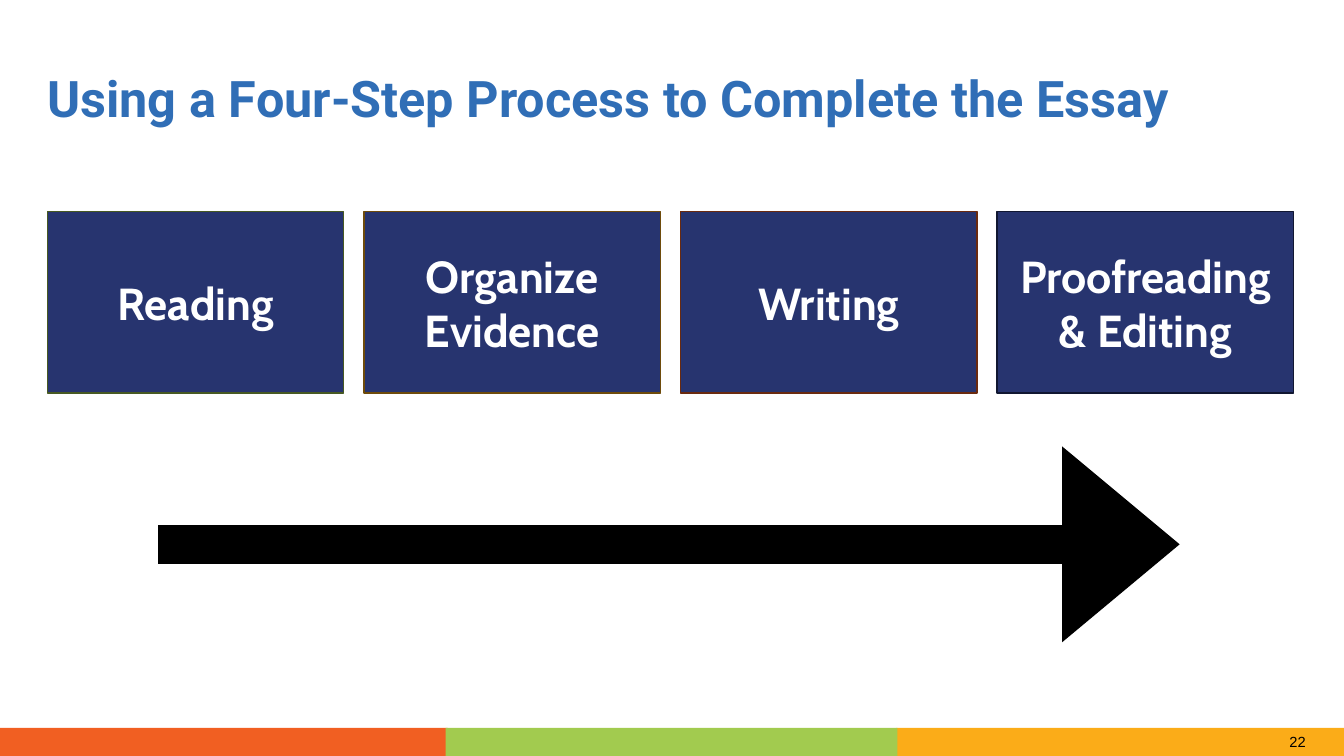
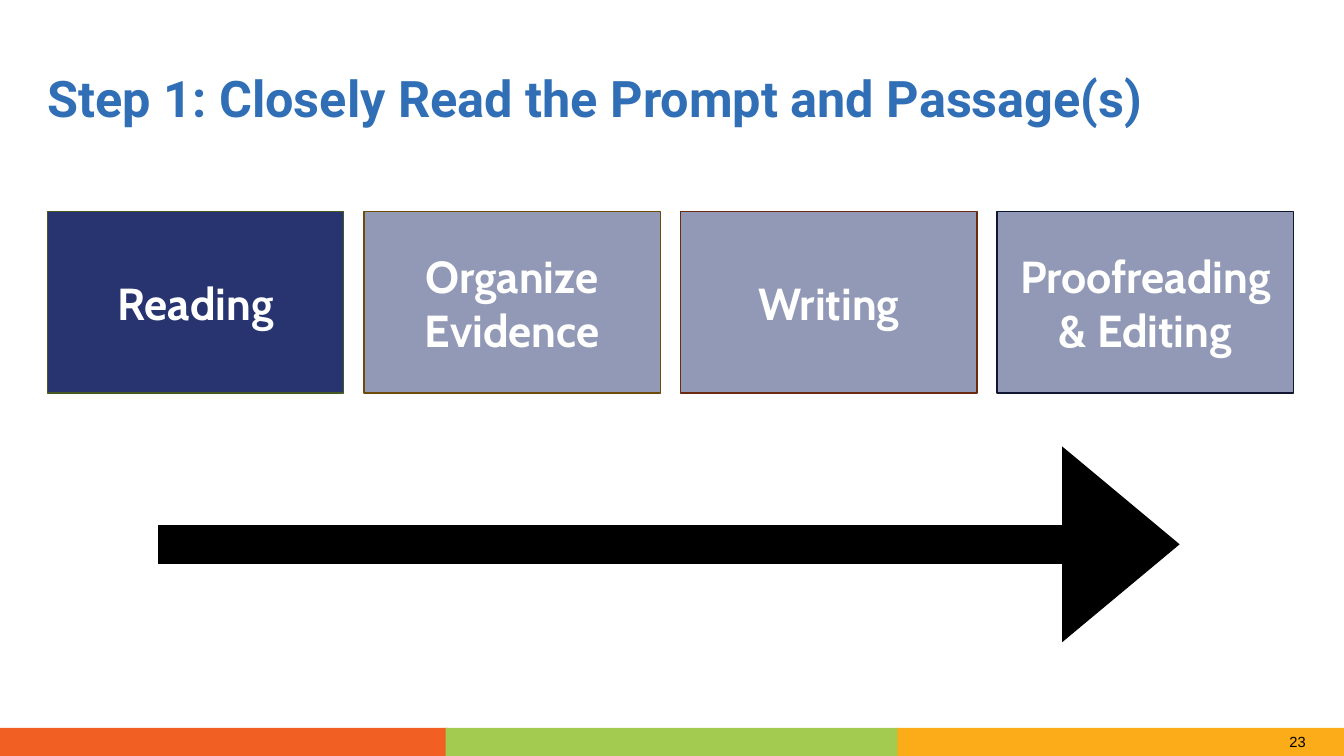
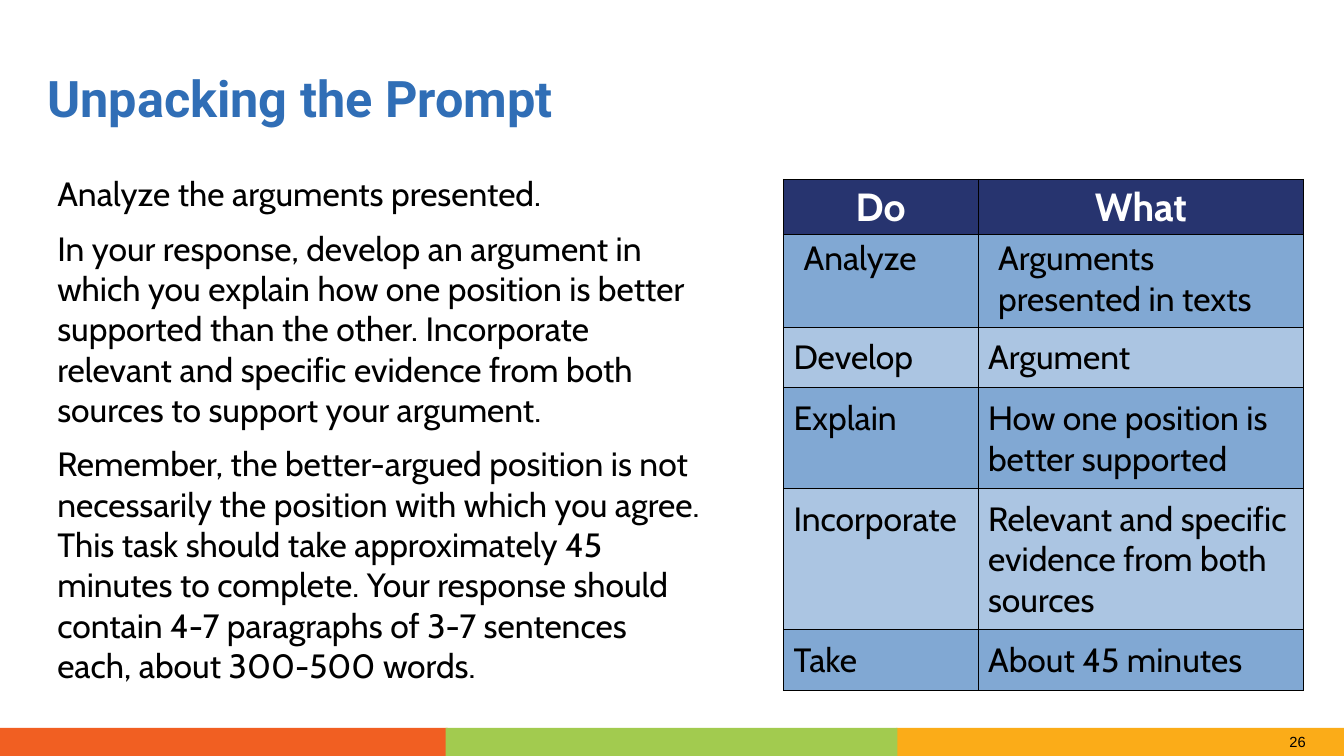
from dataclasses import dataclass

from lxml import etree
from pptx import Presentation
from pptx.dml.color import RGBColor
from pptx.enum.shapes import MSO_CONNECTOR, MSO_SHAPE
from pptx.enum.text import MSO_ANCHOR, PP_ALIGN
from pptx.oxml.ns import qn
from pptx.util import Inches, Pt

RECTANGLE = MSO_SHAPE.RECTANGLE
STRAIGHT = MSO_CONNECTOR.STRAIGHT
LEFT, CENTER = PP_ALIGN.LEFT, PP_ALIGN.CENTER
TOP, MIDDLE = MSO_ANCHOR.TOP, MSO_ANCHOR.MIDDLE

COLORS = {
    "navy": "27346F", "blue": "2E6EB7", "title": "306EB6",
    "orange": "F15F22", "green": "A2CB4F", "amber": "FBAC18",
    "black": "000000", "white": "FFFFFF",
    "olive edge": "475923", "brown edge": "6E4B0B",
    "rust edge": "6A2A0F", "dark edge": "111731",
}
BODY_FONT = "Cabin"


@dataclass(frozen=True)
class Band:
    left: float
    width: float
    color: str


@dataclass(frozen=True)
class Step:
    label: str
    edge: str


BANDS = [Band(8.89, 4.44, "amber"), Band(0, 4.44, "orange"), Band(4.42, 4.48, "green")]
BAND_TOP, BAND_HEIGHT = 7.22, 0.28
MARGIN = 0.47

STEPS = [
    Step("Reading", "olive edge"),
    Step("Organize Evidence", "brown edge"),
    Step("Writing", "rust edge"),
    Step("Proofreading & Editing", "dark edge"),
]
STEP_TOP, STEP_WIDTH, STEP_HEIGHT, STEP_GAP = 2.1, 2.94, 1.8, 0.2

PROMPT = [
    "Analyze the arguments presented.",
    "In your response, develop an argument in which you explain how one position is better "
    "supported than the other. Incorporate relevant and specific evidence from both sources "
    "to support your argument.",
    "Remember, the better-argued position is not necessarily the position with which you agree. "
    "This task should take approximately 45 minutes to complete. Your response should contain "
    "4-7 paragraphs of 3-7 sentences each, about 300-500 words.",
]
TASKS = [
    ("Do", "What"),
    ("Analyze", "Arguments presented in texts"),
    ("Develop", "Argument"),
    ("Explain", "How one position is better supported"),
    ("Incorporate", "Relevant and specific evidence from both sources"),
    ("Take", "About 45 minutes"),
]
TASK_COLUMNS = [1.93, 3.23]
TASK_ROWS = [0.48, 0.92, 0.59, 0.99, 1.39, 0.59]


def rgb(name: str) -> RGBColor:
    return RGBColor.from_string(COLORS[name])


def set_fill(fill, color: str, opacity: int = 100) -> None:
    """Fill with a solid colour; opacity is in percent."""
    fill.solid()
    fill.fore_color.rgb = rgb(color)
    if opacity < 100:
        # The public fill object holds no alpha, so it is added to the colour element
        color_element = fill.fore_color._color._xClr
        etree.SubElement(color_element, qn("a:alpha"), val=str(opacity * 1000))


def write_text(frame, *texts: str, size: float, font: str = BODY_FONT, color: str = "black",
               bold: bool = False, align=LEFT, anchor=TOP, before: float = 0,
               line_spacing: float = 1.0) -> None:
    frame.word_wrap = True
    frame.vertical_anchor = anchor
    for index, text in enumerate(texts):
        para = frame.paragraphs[0] if index == 0 else frame.add_paragraph()
        para.alignment = align
        para.space_before = Pt(before)
        para.line_spacing = line_spacing
        span = para.add_run()
        span.text = text
        span.font.name = font
        span.font.size = Pt(size)
        span.font.bold = bold
        span.font.color.rgb = rgb(color)


def set_insets(target, horizontal: float, vertical: float) -> None:
    target.margin_left = target.margin_right = Inches(horizontal)
    target.margin_top = target.margin_bottom = Inches(vertical)


def add_text_box(page, left: float, top: float, width: float, height: float):
    return page.shapes.add_textbox(Inches(left), Inches(top), Inches(width), Inches(height)).text_frame


def add_rectangle(page, left: float, top: float, width: float, height: float,
                  color: str, opacity: int = 100):
    box = page.shapes.add_shape(RECTANGLE, Inches(left), Inches(top), Inches(width), Inches(height))
    box.shadow.inherit = False
    box.line.fill.background()
    set_fill(box.fill, color, opacity)
    return box


def add_page(deck, title: str, number: int):
    """Add a slide with the shared bands, page number and title."""
    page = deck.slides.add_slide(deck.slide_layouts[6])
    for band in BANDS:
        add_rectangle(page, band.left, BAND_TOP, band.width, BAND_HEIGHT, band.color)
    write_text(add_text_box(page, 12.69, BAND_TOP, 0.38, BAND_HEIGHT), str(number),
               size=10.5, font="Arial")
    frame = add_text_box(page, MARGIN, 0.77, 12.4, 0.47)
    set_insets(frame, 0, 0)
    write_text(frame, title, size=36, font="Roboto", color="title", bold=True,
               anchor=MIDDLE, line_spacing=0.9)
    return page


def add_process(page, active: set[str]) -> None:
    """Draw the step boxes, fading inactive ones, and the arrow below."""
    for index, step in enumerate(STEPS):
        left = MARGIN + index * (STEP_WIDTH + STEP_GAP)
        box = add_rectangle(page, left, STEP_TOP, STEP_WIDTH, STEP_HEIGHT, "navy",
                            100 if step.label in active else 50)
        box.line.color.rgb = rgb(step.edge)
        box.line.width = Pt(1)
        write_text(box.text_frame, step.label, size=32, color="white", bold=True,
                   align=CENTER, anchor=MIDDLE)
    arrow = page.shapes.add_connector(STRAIGHT, Inches(1.57), Inches(5.4), Inches(11.7), Inches(5.4))
    arrow.line.color.rgb = rgb("black")
    arrow.line.width = Pt(28)
    properties = arrow._element.spPr
    etree.SubElement(properties.find(qn("a:ln")), qn("a:tailEnd"), type="triangle", w="lg", len="med")
    etree.SubElement(properties, qn("a:effectLst"))


def add_borders(cell, color: str, width: float) -> None:
    properties = cell._tc.get_or_add_tcPr()
    for index, side in enumerate(("lnL", "lnR", "lnT", "lnB")):
        border = etree.Element(qn(f"a:{side}"), w=str(Pt(width)))
        fill = etree.SubElement(border, qn("a:solidFill"))
        etree.SubElement(fill, qn("a:srgbClr"), val=COLORS[color])
        properties.insert(index, border)


def add_task_table(page) -> None:
    table = page.shapes.add_table(
        len(TASK_ROWS), len(TASK_COLUMNS), Inches(7.77), Inches(1.78),
        Inches(sum(TASK_COLUMNS)), Inches(sum(TASK_ROWS))).table
    table.horz_banding = False
    for column, width in zip(table.columns, TASK_COLUMNS):
        column.width = Inches(width)
    for row_index, (row, height) in enumerate(zip(table.rows, TASK_ROWS)):
        row.height = Inches(height)
        for cell, text in zip(row.cells, TASKS[row_index]):
            if row_index == 0:
                set_insets(cell, 0.08, 0.04)
                set_fill(cell.fill, "navy")
                write_text(cell.text_frame, text, size=28, color="white", bold=True, align=CENTER)
            else:
                set_insets(cell, *((0.2, 0.04) if row_index == 1 else (0.1, 0.1)))
                set_fill(cell.fill, "blue", 60 if row_index % 2 else 40)
                write_text(cell.text_frame, text, size=24)
            add_borders(cell, "black", 0.8)


def main() -> None:
    deck = Presentation()
    deck.slide_width, deck.slide_height = Inches(13.33), Inches(7.5)

    # Process overview
    page = add_page(deck, "Using a Four-Step Process to Complete the Essay", 22)
    add_process(page, {step.label for step in STEPS})

    # First step
    page = add_page(deck, "Step 1: Closely Read the Prompt and Passage(s)", 23)
    add_process(page, {"Reading"})

    # Prompt and its tasks
    page = add_page(deck, "Unpacking the Prompt", 26)
    write_text(add_text_box(page, MARGIN, 1.67, 6.58, 5.23), *PROMPT, size=24, before=10)
    add_task_table(page)

    deck.save("out.pptx")


if __name__ == "__main__":
    main()
